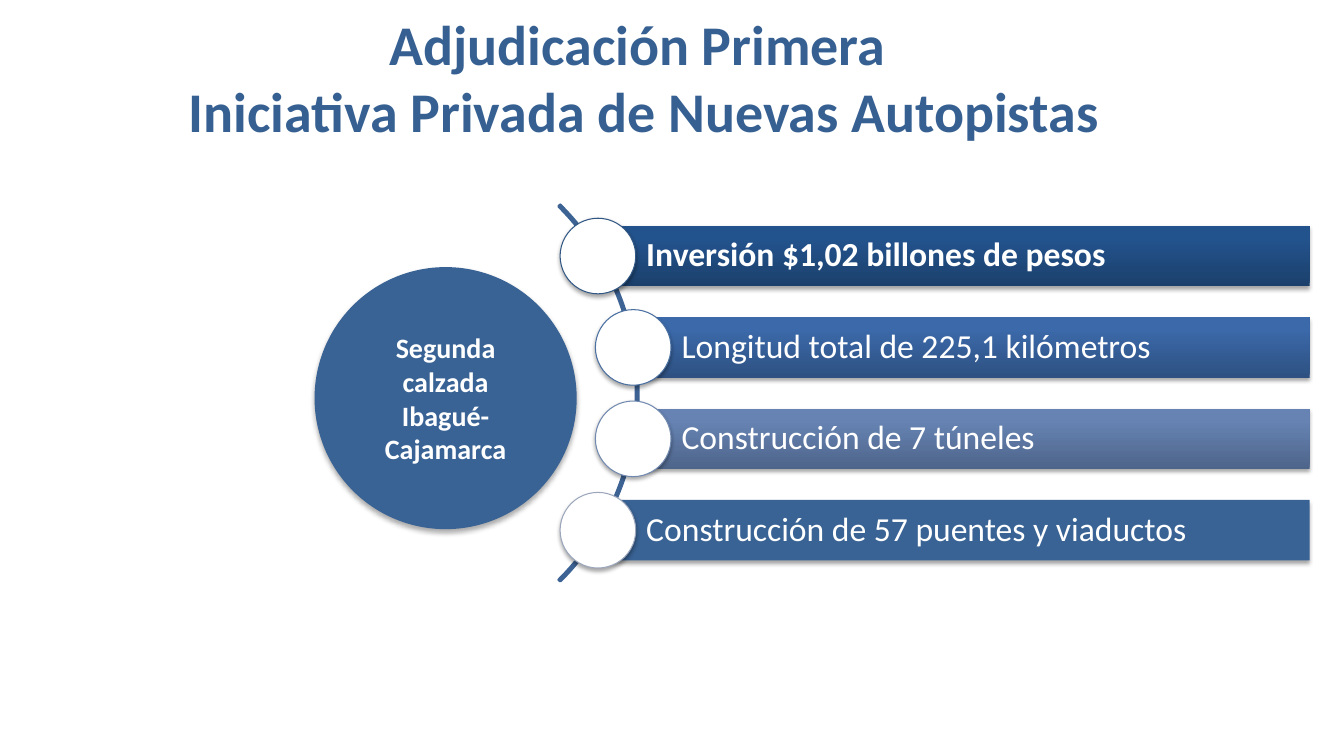
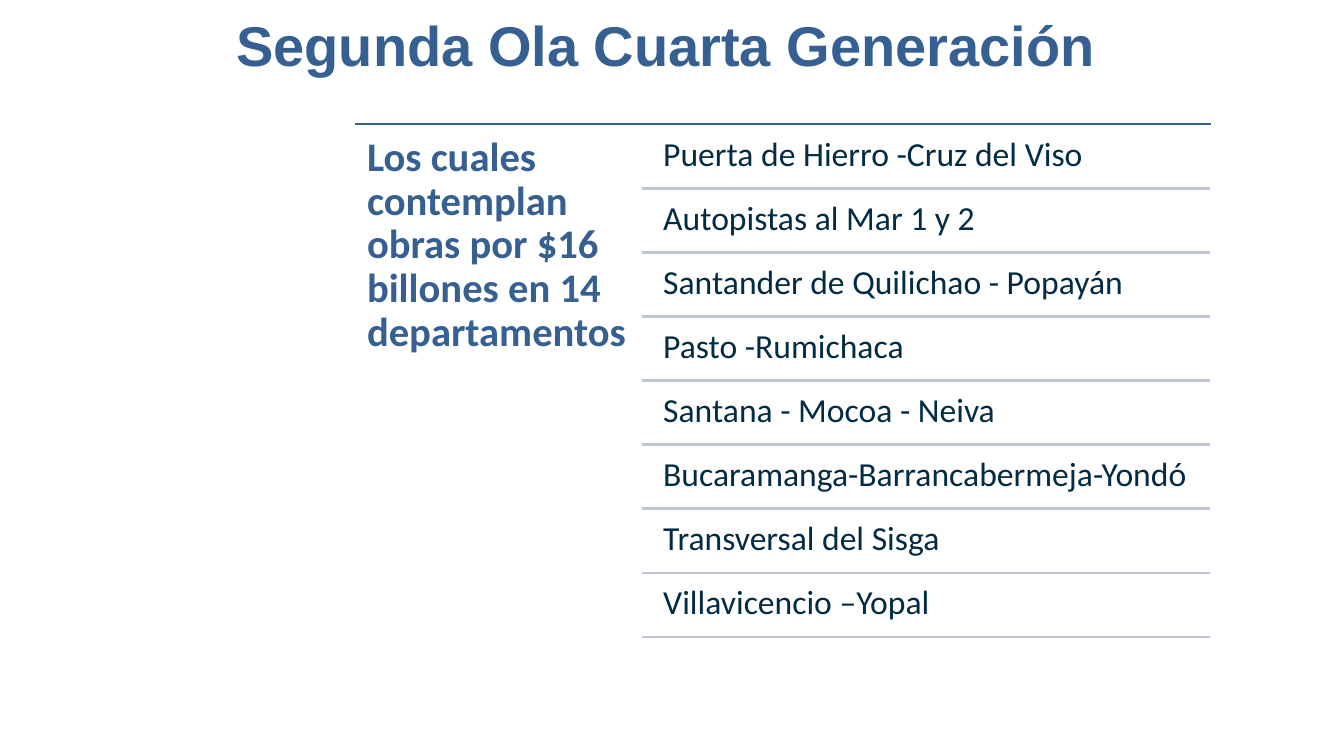
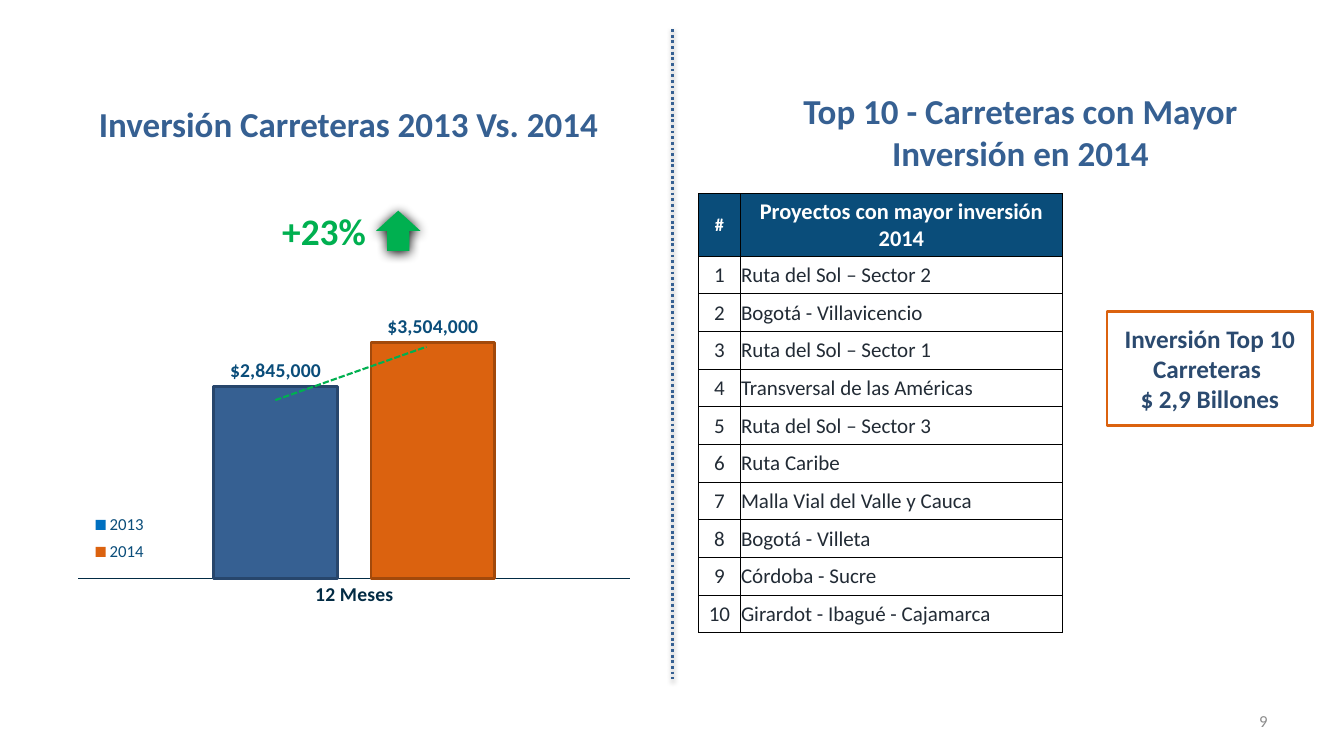
"""Build three slides on highway concessions and road investment."""
from lxml import etree
from pptx import Presentation
from pptx.chart.data import CategoryChartData
from pptx.dml.color import RGBColor
from pptx.enum.chart import XL_CHART_TYPE as ChartType, XL_LABEL_POSITION as LabelPos
from pptx.enum.chart import XL_LEGEND_POSITION as LegendPos, XL_TICK_MARK as TickMark
from pptx.enum.dml import MSO_LINE_DASH_STYLE as Dash
from pptx.enum.shapes import MSO_CONNECTOR as Connector, MSO_SHAPE as Shape
from pptx.enum.text import MSO_ANCHOR as Anchor, PP_ALIGN as Align
from pptx.oxml import parse_xml
from pptx.oxml.ns import nsdecls, qn
from pptx.util import Inches, Pt

WHITE = RGBColor(0xFF, 0xFF, 0xFF)
BLACK = RGBColor(0, 0, 0)
TITLE_BLUE = RGBColor(0x36, 0x60, 0x92)
DISC_BLUE = RGBColor(0x39, 0x63, 0x95)
ARC_BLUE = RGBColor(0x3D, 0x63, 0x94)
HEADER_BLUE = RGBColor(0x0A, 0x4D, 0x7A)
NAVY = RGBColor(0x02, 0x2B, 0x44)
BOX_BLUE = RGBColor(0x2B, 0x4A, 0x6F)
EDGE_BLUE = RGBColor(0x27, 0x46, 0x6C)
LEGEND_BLUE = RGBColor(0x00, 0x70, 0xC0)
INK = RGBColor(0x22, 0x2B, 0x35)
RULE_GRAY = RGBColor(0xBF, 0xC5, 0xD2)
PAGE_GRAY = RGBColor(0x8C, 0x8C, 0x8C)
GREEN = RGBColor(0x00, 0xB0, 0x50)
ORANGE = RGBColor(0xDB, 0x62, 0x0F)
EDGE_ORANGE = RGBColor(0xA2, 0x49, 0x0B)

BAR_SHADOW = (35, 3.1, 1.8)
DISC_SHADOW = (32, 3.5, 2.2)
ARROW_SHADOW = (100, 8.5, 1)
DIVIDER_SHADOW = (38, 3.1, 1.6)
MONEY = '_-"$"* #,##0_-;\\-"$"* #,##0_-;_-"$"* "-"'

AWARD_TITLE = ["Adjudicación Primera ", "Iniciativa Privada de Nuevas Autopistas"]
AWARD_ROAD = "Segunda calzada Ibagué-Cajamarca"
AWARD_FACTS = [
    ("Inversión $1,02 billones de pesos", True, 5.93, ("1B406C", "23538D"), "315785"),
    ("Longitud total de 225,1 kilómetros", False, 6.28, ("2E5182", "3B69A9"), "4A6FA1"),
    ("Construcción de 7 túneles", False, 6.28, ("4E658A", "6683B3"), "728AB0"),
    ("Construcción de 57 puentes y viaductos", False, 5.93, ("396395",), "9CA7BC"),
]

WAVE_TITLE = "Segunda Ola Cuarta Generación"
WAVE_SUMMARY = "Los cuales contemplan obras por $16 billones en 14 departamentos"
WAVE_ROADS = [
    "Puerta de Hierro -Cruz del Viso",
    "Autopistas al Mar 1 y 2",
    "Santander de Quilichao - Popayán",
    "Pasto -Rumichaca",
    "Santana - Mocoa - Neiva",
    "Bucaramanga-Barrancabermeja-Yondó",
    "Transversal del Sisga",
    "Villavicencio –Yopal",
]

INVESTMENT_TITLE = "Inversión Carreteras 2013 Vs. 2014"
INVESTMENT = [
    ("2013", 2845000, LEGEND_BLUE, TITLE_BLUE, EDGE_BLUE),
    ("2014", 3504000, ORANGE, ORANGE, EDGE_ORANGE),
]
TOP_TITLE = "Top 10 - Carreteras con Mayor Inversión en 2014"
TOP_HEADER = ("#", "Proyectos con mayor inversión 2014")
TOP_ROADS = [
    "Ruta del Sol – Sector 2",
    "Bogotá - Villavicencio",
    "Ruta del Sol – Sector 1",
    "Transversal de las Américas",
    "Ruta del Sol – Sector 3",
    "Ruta Caribe",
    "Malla Vial del Valle y Cauca",
    "Bogotá - Villeta",
    "Córdoba - Sucre",
    "Girardot - Ibagué - Cajamarca",
]
TOP_TOTAL = ["Inversión Top 10 Carreteras ", "$ 2,9 Billones"]


def inches(values):
    return [Inches(value) for value in values]


def style_font(font, size, color, bold=False, name="Calibri"):
    font.size, font.bold, font.name = Pt(size), bold, name
    font.color.rgb = color


def write(frame, lines, size, color, bold=False, align=Align.LEFT, name="Calibri", spacing=None):
    for index, line in enumerate(lines):
        paragraph = frame.add_paragraph() if index else frame.paragraphs[0]
        paragraph.alignment = align
        if spacing:
            paragraph.line_spacing = spacing
        run = paragraph.add_run()
        run.text = line
        style_font(run.font, size, color, bold, name)


def set_insets(frame, left, top, right, bottom):
    frame.margin_left, frame.margin_top, frame.margin_right, frame.margin_bottom = inches(
        (left, top, right, bottom))


def add_text(slide, box, lines, size, color, inset=None, wrap=True, anchor=Anchor.TOP, **style):
    frame = slide.shapes.add_textbox(*inches(box)).text_frame
    frame.word_wrap = wrap
    frame.vertical_anchor = anchor
    if inset:
        set_insets(frame, *[inset] * 4)
    write(frame, lines, size, color, **style)


def add_title(slide, box, lines, size=40, **style):
    add_text(slide, box, lines, size, TITLE_BLUE, bold=True, align=Align.CENTER, **style)


def cast_shadow(properties, opacity, blur, distance):
    effects = properties.find(qn("a:effectLst"))
    shade = etree.SubElement(effects, qn("a:outerShdw"), blurRad=str(Pt(blur)),
                             dist=str(Pt(distance)), dir="5400000", algn="ctr", rotWithShape="0")
    color = etree.SubElement(shade, qn("a:srgbClr"), val="000000")
    etree.SubElement(color, qn("a:alpha"), val=str(opacity * 1000))


def add_figure(slide, kind, box, fill=None, line=None, width=0.75, shadow=None):
    figure = slide.shapes.add_shape(kind, *inches(box))
    figure.shadow.inherit = False
    if fill is None:
        figure.fill.background()
    else:
        figure.fill.solid()
        figure.fill.fore_color.rgb = fill
    if line is None:
        figure.line.fill.background()
    else:
        figure.line.color.rgb = line
        figure.line.width = Pt(width)
    if shadow:
        cast_shadow(figure._element.spPr, *shadow)
    figure.text_frame.word_wrap = True
    figure.text_frame.vertical_anchor = Anchor.MIDDLE
    return figure


def add_line(slide, start, end, color, width=2, dash=None, shadow=None):
    line = slide.shapes.add_connector(Connector.STRAIGHT, *inches(start + end))
    line.line.color.rgb = color
    line.line.width = Pt(width)
    if dash:
        line.line.dash_style = dash
    properties = line._element.spPr
    etree.SubElement(properties, qn("a:effectLst"))
    if shadow:
        cast_shadow(properties, *shadow)


def build_award(slide):
    bar_top, bar_height, pitch, right_edge, ring = 2.24, 0.6, 2.72 / 3, 12.99, 0.75
    arc = add_figure(slide, Shape.BLOCK_ARC, (1.05, 1.26, 5.28, 5.28), line=ARC_BLUE, width=2)
    for index, value in enumerate((189, 27, 0.004)):
        arc.adjustments[index] = value
    for index, (fact, bold, left, tones, ring_color) in enumerate(AWARD_FACTS):
        top = bar_top + index * pitch
        colors = [RGBColor.from_string(tone) for tone in tones]
        bar = add_figure(slide, Shape.RECTANGLE, (left, top, right_edge - left, bar_height),
                         colors[0], shadow=BAR_SHADOW)
        if len(colors) > 1:
            bar.fill.gradient()
            bar.fill.gradient_angle = 90
            for stop, color, position in zip(bar.fill.gradient_stops, colors, (0, 0.8)):
                stop.color.rgb = color
                stop.position = position
        set_insets(bar.text_frame, 0.48, 0.07, 0.07, 0.07)
        write(bar.text_frame, [fact], 24, WHITE, bold, spacing=0.9)
        ring_top = top + (bar_height - ring) / 2
        add_figure(slide, Shape.OVAL, (left - ring / 2, ring_top, ring, ring), WHITE,
                   RGBColor.from_string(ring_color), shadow=BAR_SHADOW)
    disc = add_figure(slide, Shape.OVAL, (3.12, 2.65, 2.6, 2.6), DISC_BLUE, shadow=DISC_SHADOW)
    write(disc.text_frame, [AWARD_ROAD], 20, WHITE, True, Align.CENTER)
    add_title(slide, (1.72, 0.04, 9.33, 1.45), AWARD_TITLE, wrap=False)


def build_wave(slide):
    first_rule, last_rule, row_height = 1.87, 6.32, 0.61
    pitch = (last_rule - first_rule) / (len(WAVE_ROADS) - 1)
    add_line(slide, (3.52, 1.23), (12.01, 1.23), TITLE_BLUE)
    add_text(slide, (3.52, 1.23, 2.85, 5.12), [WAVE_SUMMARY], 29, TITLE_BLUE, inset=0.12,
             bold=True, spacing=0.9)
    for index, road in enumerate(WAVE_ROADS):
        rule = first_rule + index * pitch
        add_text(slide, (6.48, rule - row_height, 5.53, row_height), [road], 24, NAVY,
                 inset=0.1, spacing=0.9)
        add_line(slide, (6.37, rule), (12, rule), RULE_GRAY)
    add_title(slide, (2.2, 0.06, 8.8, 0.77), [WAVE_TITLE], wrap=False, name="Arial")


def set_layout(parent, index, x, y, w, h, inner=False):
    for old in parent.findall(qn("c:layout")):
        parent.remove(old)
    target = '<c:layoutTarget val="inner"/>' if inner else ""
    sizes = "".join(f'<c:{tag} val="{value}"/>' for tag, value in zip("xywh", (x, y, w, h)))
    parent.insert(index, parse_xml(
        f'<c:layout {nsdecls("c")}><c:manualLayout>{target}<c:xMode val="edge"/>'
        f'<c:yMode val="edge"/>{sizes}</c:manualLayout></c:layout>'))


def add_investment_chart(slide):
    data = CategoryChartData()
    data.categories = ["12 Meses"]
    for year, amount, *_ in INVESTMENT:
        data.add_series(year, [amount])
    chart = slide.shapes.add_chart(
        ChartType.COLUMN_CLUSTERED, *inches((0.54, 1.66, 5.89, 4.69)), data).chart
    style_font(chart.font, 12, NAVY)
    chart.has_title = False
    chart.has_legend = True
    chart.legend.position = LegendPos.BOTTOM
    chart.legend.include_in_layout = False
    style_font(chart.legend.font, 12, HEADER_BLUE)
    set_layout(chart.legend._element, 1, 0.06, 0.72, 0.1, 0.13)
    set_layout(chart._chartSpace.chart.plotArea, 0, 0.04, 0.3, 0.93, 0.57, inner=True)

    months, amounts = chart.category_axis, chart.value_axis
    months.major_tick_mark = TickMark.NONE
    months.format.line.color.rgb = NAVY
    months.format.line.width = Pt(0.75)
    style_font(months.tick_labels.font, 14, NAVY, True)
    amounts.visible = False
    amounts.has_major_gridlines = False
    amounts.minimum_scale, amounts.maximum_scale = 0, 4000000

    plot = chart.plots[0]
    plot.vary_by_categories = False
    plot.gap_width, plot.overlap = 219, -27
    for series, (_, _, key_color, color, edge) in zip(plot.series, INVESTMENT):
        series.format.fill.solid()
        series.format.fill.fore_color.rgb = key_color
        column = series.points[0].format
        column.fill.solid()
        column.fill.fore_color.rgb = color
        column.line.color.rgb = edge
        column.line.width = Pt(2)
        labels = series.data_labels
        labels.show_value = True
        labels.position = LabelPos.OUTSIDE_END
        labels.number_format, labels.number_format_is_linked = MONEY, False
        style_font(labels.font, 14, HEADER_BLUE, True)


def outline_cell(cell):
    properties = cell._tc.get_or_add_tcPr()
    for side in ("lnL", "lnR", "lnT", "lnB"):
        edge = etree.SubElement(properties, qn(f"a:{side}"), w=str(Pt(0.5)))
        fill = etree.SubElement(edge, qn("a:solidFill"))
        etree.SubElement(fill, qn("a:srgbClr"), val=str(BLACK))


def add_top_table(slide):
    header_height, height, widths = 0.62, 4.36, (0.41, 3.2)
    rows = [TOP_HEADER] + [(str(rank), road) for rank, road in enumerate(TOP_ROADS, 1)]
    table = slide.shapes.add_table(
        len(rows), len(widths), *inches((6.93, 1.92, sum(widths), height))).table
    table.horz_banding = False
    for column, width in zip(table.columns, widths):
        column.width = Inches(width)
    for index, texts in enumerate(rows):
        is_header = index == 0
        table.rows[index].height = Inches(
            header_height if is_header else (height - header_height) / len(TOP_ROADS))
        for place, text in enumerate(texts):
            cell = table.cell(index, place)
            outline_cell(cell)
            set_insets(cell, 0.01, 0.01, 0.01, 0)
            cell.vertical_anchor = Anchor.MIDDLE
            if is_header:
                cell.fill.solid()
                cell.fill.fore_color.rgb = HEADER_BLUE
                write(cell.text_frame, [text], (13, 16)[place], WHITE, True, Align.CENTER)
            else:
                cell.fill.background()
                write(cell.text_frame, [text], 15, INK, align=(Align.CENTER, Align.LEFT)[place])


def build_investment(slide):
    add_text(slide, (9.56, 6.95, 3.11, 0.4), ["9"], 12, PAGE_GRAY, anchor=Anchor.MIDDLE,
             align=Align.RIGHT)
    add_top_table(slide)
    add_investment_chart(slide)
    add_title(slide, (7.19, 0.84, 5.86, 0.94), [TOP_TITLE], 25)
    add_title(slide, (0, 0.97, 6.91, 0.52), [INVESTMENT_TITLE], 25)
    add_text(slide, (2.49, 2.02, 1.45, 0.55), ["+23%"], 26.7, GREEN, bold=True,
             align=Align.CENTER)
    add_line(slide, (2.73, 3.97), (4.23, 3.44), GREEN, 1.5, Dash.SQUARE_DOT)
    add_figure(slide, Shape.UP_ARROW, (3.73, 2.09, 0.44, 0.4), GREEN, shadow=ARROW_SHADOW)
    total = add_figure(slide, Shape.RECTANGLE, (10.98, 3.09, 2.04, 1.13), WHITE, ORANGE, 2)
    write(total.text_frame, TOP_TOTAL, 18, BOX_BLUE, True, Align.CENTER)
    add_line(slide, (6.67, 0.29), (6.67, 6.74), TITLE_BLUE, dash=Dash.ROUND_DOT,
             shadow=DIVIDER_SHADOW)


def main():
    deck = Presentation()
    deck.slide_width, deck.slide_height = Inches(13.33), Inches(7.5)
    for build in (build_award, build_wave, build_investment):
        build(deck.slides.add_slide(deck.slide_layouts[6]))
    deck.save("out.pptx")


if __name__ == "__main__":
    main()
